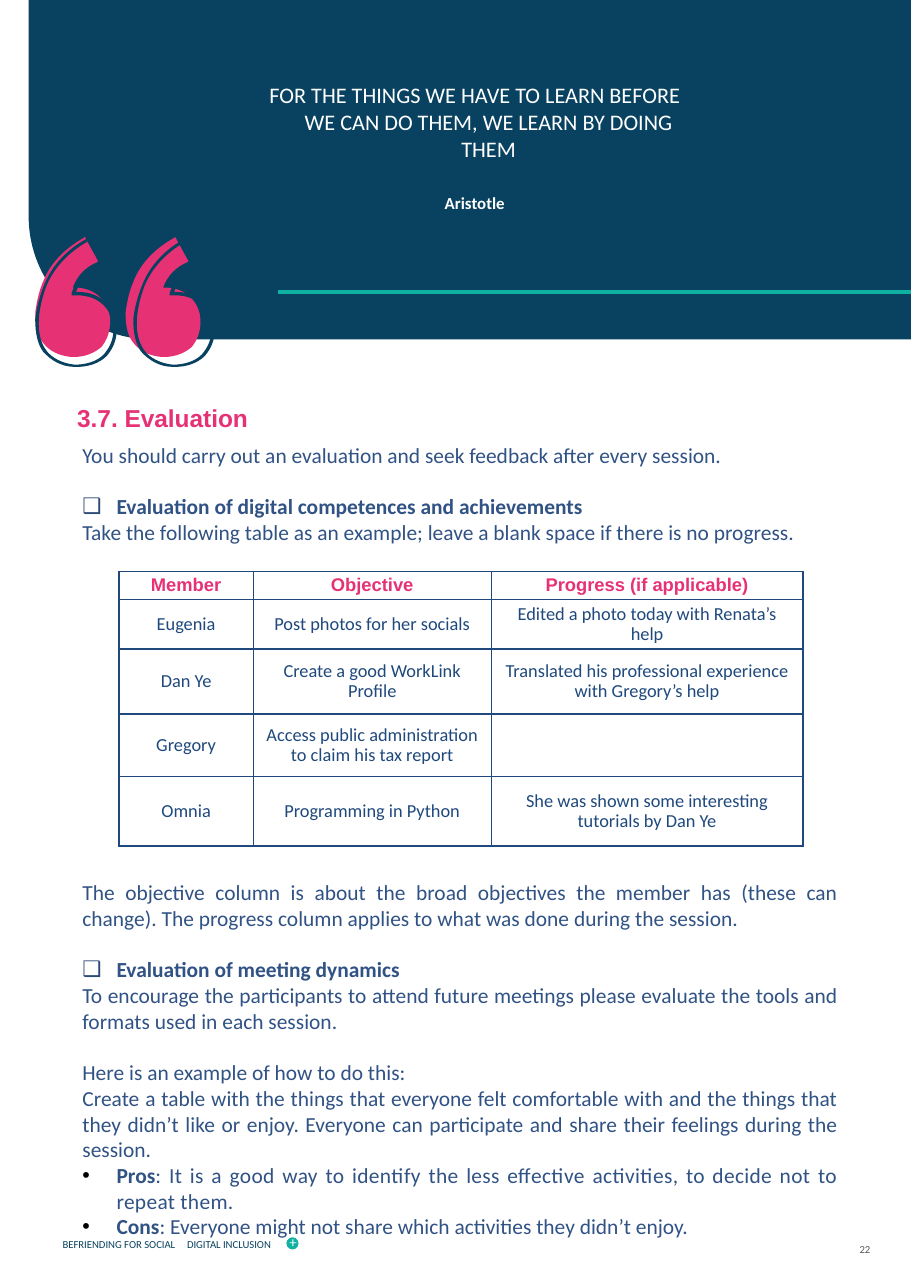
"""Builds the evaluation page of a digital inclusion handbook."""
from lxml import etree
from pptx import Presentation
from pptx.dml.color import RGBColor
from pptx.enum.shapes import MSO_CONNECTOR, MSO_SHAPE
from pptx.enum.text import MSO_ANCHOR as ANCHOR, PP_ALIGN as ALIGN
from pptx.oxml.ns import qn
from pptx.util import Inches, Pt

COLORS = {"navy": "084260", "teal": "10B1A2", "pink": "E63275", "white": "FFFFFF",
          "body": "305284", "table": "1F497D", "box": "2B4A77", "black": "000000",
          "grey": "595959"}
STYLES = {
    "title": {"name": "Arial", "size": Pt(16), "bold": True, "color": "pink"},
    "body": {"name": "Calibri", "size": Pt(14), "bold": False, "color": "body"},
    "loose": {"name": "Calibri", "size": Pt(14), "bold": False, "color": "body", "spc": 20},
    "strong": {"name": "Calibri", "size": Pt(14), "bold": True, "color": "body"},
    "quote": {"name": "Calibri", "size": Pt(14.5), "color": "white"},
    "author": {"name": "Calibri", "size": Pt(11), "bold": True, "color": "white"},
    "footer": {"name": "Calibri", "size": Pt(7), "color": "navy"},
    "number": {"name": "Calibri", "size": Pt(7), "color": "grey"},
    "header": {"name": "Arial", "size": Pt(12), "bold": True, "color": "pink"},
    "cell": {"name": "Calibri", "size": Pt(12), "bold": False, "color": "table"},
}
BOX, DOT = ("❑", "box"), ("•", "black")
LINE = 16.8

TITLE = "3.7. Evaluation"
QUOTE = [
    {"runs": [("FOR THE THINGS WE HAVE TO LEARN BEFORE WE CAN DO THEM, "
               "WE LEARN BY DOING THEM", "quote")], "indent": (0.5, -0.25)},
    {"runs": [("Aristotle", "author")], "indent": (0.5, -0.25), "before": 22.7,
     "spacing": 0.8},
]
INTRO = [
    {"runs": [("You should carry out an evaluation and seek feedback after every session.",
               "body")]},
    {"runs": [("Evaluation of digital competences and achievements", "strong")],
     "bullet": BOX, "before": LINE},
    {"runs": [("Take the following table as an example; leave a blank space if there is "
               "no progress.", "body")]},
]
DETAIL = [
    {"runs": [("The objective column is about the broad objectives the member has (these can "
               "change). The progress column applies to what was done during the session.",
               "body")]},
    {"runs": [("Evaluation of meeting dynamics", "strong")], "bullet": BOX, "before": LINE},
    {"runs": [("To encourage the participants to attend future meetings please evaluate the "
               "tools and formats used in each session.", "body")]},
    {"runs": [("Here is an example of how to do this:", "body")], "before": LINE},
    {"runs": [("Create a table with the things that everyone felt comfortable with and the "
               "things that they didn’t like or enjoy. Everyone can participate and share "
               "their feelings during the session.", "body")]},
    {"runs": [("Pros", "strong"),
              (": It is a good way to identify the less effective activities, to decide not "
               "to repeat them.", "loose")], "bullet": DOT},
    {"runs": [("Cons", "strong"),
              (": Everyone might not share which activities they didn’t enjoy.", "body")],
     "bullet": DOT},
]
FOOTER = [{"runs": [("BEFRIENDING FOR SOCIAL\tDIGITAL INCLUSION", "footer")], "tab": 1.13}]
NUMBER = [{"runs": [("22", "number")]}]
ROWS = [
    ("Member", "Objective", "Progress (if applicable)"),
    ("Eugenia", "Post photos for her socials", "Edited a photo today with Renata’s help"),
    ("Dan Ye", "Create a good WorkLink Profile",
     "Translated his professional experience with Gregory’s help"),
    ("Gregory", "Access public administration to claim his tax report", ""),
    ("Omnia", "Programming in Python", "She was shown some interesting tutorials by Dan Ye"),
]
COL_WIDTHS = (1.22, 2.16, 2.83)
ROW_HEIGHTS = (0.25, 0.45, 0.59, 0.57, 0.63)

PANEL = [[(8.27, 3.08), (1.38, 3.08), (0.76, 3.08, 0.26, 2.58, 0.26, 1.96), (0.26, 0), (8.27, 0)]]
MARK = [[(0.67, 3.24), (0.67, 3.24, 0.66, 3.24, 0.65, 3.24), (0.54, 3.23, 0.45, 3.19, 0.39, 3.11),
         (0.34, 3.05, 0.32, 2.96, 0.32, 2.84), (0.33, 2.76, 0.35, 2.65, 0.39, 2.56),
         (0.45, 2.4, 0.58, 2.26, 0.76, 2.16), (0.77, 2.15), (0.89, 2.37), (0.88, 2.38),
         (0.78, 2.42, 0.7, 2.5, 0.66, 2.61), (0.67, 2.61), (0.77, 2.61, 0.85, 2.64, 0.91, 2.7),
         (0.97, 2.76, 1, 2.83, 1, 2.92), (1, 3.01, 0.97, 3.09, 0.92, 3.15),
         (0.85, 3.21, 0.76, 3.24, 0.67, 3.24)]]
MARK_RIM = [
    [(0.42, 3.18), (0.47, 3.25, 0.57, 3.3, 0.68, 3.31), (0.78, 3.31, 0.88, 3.28, 0.94, 3.22),
     (1, 3.15, 1.03, 3.08, 1.03, 2.99), (1.03, 2.9, 1, 2.83, 0.94, 2.77),
     (0.88, 2.71, 0.8, 2.68, 0.69, 2.68), (0.65, 2.68), (0.65, 2.66),
     (0.7, 2.52, 0.79, 2.43, 0.9, 2.38), (0.8, 2.19), (0.62, 2.29, 0.49, 2.43, 0.42, 2.6),
     (0.35, 2.79, 0.31, 3.03, 0.42, 3.18)],
    [(0.7, 3.33), (0.69, 3.33, 0.69, 3.33, 0.68, 3.33), (0.56, 3.33, 0.46, 3.27, 0.39, 3.19),
     (0.34, 3.12, 0.32, 3.02, 0.32, 2.9), (0.33, 2.8, 0.36, 2.69, 0.4, 2.59),
     (0.47, 2.41, 0.61, 2.26, 0.8, 2.16), (0.82, 2.15), (0.95, 2.39), (0.93, 2.39),
     (0.82, 2.44, 0.74, 2.52, 0.69, 2.65), (0.7, 2.65), (0.81, 2.65, 0.9, 2.68, 0.96, 2.75),
     (1.03, 2.81, 1.06, 2.89, 1.06, 2.99), (1.06, 3.08, 1.03, 3.16, 0.97, 3.23),
     (0.9, 3.3, 0.8, 3.33, 0.7, 3.33)]]


def rgb(name):
    return RGBColor.from_string(COLORS[name])


def paint(sp, color):
    sp.shadow.inherit = False
    sp.fill.solid()
    sp.fill.fore_color.rgb = rgb(color)
    sp.line.fill.background()


def add_run(p, text, style):
    r = p.add_run()
    r.text = text
    for key, value in STYLES[style].items():
        if key == "color":
            r.font.color.rgb = rgb(value)
        elif key == "spc":
            r._r.get_or_add_rPr().set(key, str(value))
        else:
            setattr(r.font, key, value)


def fill_text(tf, paragraphs, align, anchor=ANCHOR.TOP):
    tf.word_wrap, tf.vertical_anchor = True, anchor
    for i, item in enumerate(paragraphs):
        p = tf.add_paragraph() if i else tf.paragraphs[0]
        pPr = p._p.get_or_add_pPr()
        indent = item.get("indent", (0.31, -0.31) if "bullet" in item else None)
        if indent:
            for key, value in zip(("marL", "indent"), indent):
                pPr.set(key, str(Inches(value)))
        if "bullet" in item:
            char, color = item["bullet"]
            clr = etree.SubElement(pPr, qn("a:buClr"))
            etree.SubElement(clr, qn("a:srgbClr"), val=COLORS[color])
            etree.SubElement(pPr, qn("a:buFont"), typeface="Arial")
            etree.SubElement(pPr, qn("a:buChar"), char=char)
        if "tab" in item:
            tabs = etree.SubElement(pPr, qn("a:tabLst"))
            etree.SubElement(tabs, qn("a:tab"), pos=str(Inches(item["tab"])), algn="l")
        p.alignment = align
        p.space_before = Pt(item.get("before", 0))
        p.line_spacing = item.get("spacing", 1.0)
        for text, style in item["runs"]:
            add_run(p, text, style)


def add_text(shapes, box, *args):
    fill_text(shapes.add_textbox(*map(Inches, box)).text_frame, *args)


def add_outline(shapes, contours, color, dx=0):
    builder = None
    for contour in contours:
        points = [(Inches(seg[k] + dx), Inches(seg[k + 1]))
                  for seg in contour for k in range(0, len(seg), 2)]
        if builder:
            builder.move_to(*points[0])
        else:
            builder = shapes.build_freeform(*points[0])
        builder.add_line_segments(points[1:], close=True)
    sp = builder.convert_to_shape()
    lines = list(sp._element.iter(qn("a:lnTo")))
    for seg in (s for contour in contours for s in contour[1:]):
        group = [lines.pop(0) for _ in range(len(seg) // 2)]
        if len(group) == 3:
            curve = etree.Element(qn("a:cubicBezTo"))
            group[0].addprevious(curve)
            for line in group:
                curve.append(line[0])
                line.getparent().remove(line)
    paint(sp, color)


def add_progress_table(shapes):
    size = (sum(COL_WIDTHS), sum(ROW_HEIGHTS))
    table = shapes.add_table(len(ROWS), len(COL_WIDTHS), *map(Inches, (1.08, 5.19, *size))).table
    table.first_row = table.horz_banding = False
    for column, width in zip(table.columns, COL_WIDTHS):
        column.width = Inches(width)
    for i, (row, height) in enumerate(zip(table.rows, ROW_HEIGHTS)):
        row.height = Inches(height)
        for cell, text in zip(row.cells, ROWS[i]):
            cell.fill.background()
            cell.vertical_anchor = ANCHOR.MIDDLE
            cell.margin_left = cell.margin_right = Inches(0.08)
            cell.margin_top = cell.margin_bottom = 0
            p = cell.text_frame.paragraphs[0]
            p.alignment, p.line_spacing = ALIGN.CENTER, 0.9
            if text:
                add_run(p, text, "cell" if i else "header")
            tcPr = cell._tc.get_or_add_tcPr()
            for k, side in enumerate("LRTB"):
                ln = etree.Element(qn("a:ln" + side), w=str(Pt(0.95)))
                fill = etree.SubElement(ln, qn("a:solidFill"))
                etree.SubElement(fill, qn("a:srgbClr"), val=COLORS["table"])
                tcPr.insert(k, ln)


def main():
    prs = Presentation()
    prs.slide_width, prs.slide_height = Inches(8.27), Inches(11.69)
    shapes = prs.slides.add_slide(prs.slide_layouts[5]).shapes
    add_text(shapes, (0.47, 11.09, 4.03, 0.4), FOOTER, ALIGN.LEFT, ANCHOR.MIDDLE)
    paint(shapes.add_shape(MSO_SHAPE.OVAL, *map(Inches, (2.6, 11.23, 0.11, 0.11))), "teal")
    plus = shapes.add_shape(MSO_SHAPE.CROSS, *map(Inches, (2.63, 11.25, 0.06, 0.06)))
    plus.adjustments[0] = 0.43
    paint(plus, "white")
    add_outline(shapes, PANEL, "navy")
    rule = shapes.add_connector(MSO_CONNECTOR.STRAIGHT, *map(Inches, (2.52, 2.65, 8.27, 2.65)))
    rule.line.color.rgb, rule.line.width = rgb("teal"), Pt(3)
    etree.SubElement(rule._element.spPr, qn("a:effectLst"))
    add_text(shapes, (2.08, 0.57, 4.21, 1.53), QUOTE, ALIGN.CENTER, ANCHOR.MIDDLE)
    add_text(shapes, (7.54, 11.08, 0.46, 0.51), NUMBER, ALIGN.RIGHT, ANCHOR.MIDDLE)
    for contours, color, gap in ((MARK, "pink", 0.82), (MARK_RIM, "navy", 0.89)):
        for dx in (0, gap):
            add_outline(shapes, contours, color, dx)
    title = shapes.title
    title.left, title.top, title.width, title.height = map(Inches, (0.6, 3.61, 3.53, 0.58))
    fill_text(title.text_frame, [{"runs": [(TITLE, "title")]}], ALIGN.JUSTIFY)
    add_text(shapes, (0.65, 3.96, 7.06, 1.05), INTRO, ALIGN.JUSTIFY)
    add_text(shapes, (0.65, 7.93, 7.06, 3.43), DETAIL, ALIGN.JUSTIFY)
    add_progress_table(shapes)
    prs.save("out.pptx")


if __name__ == "__main__":
    main()
